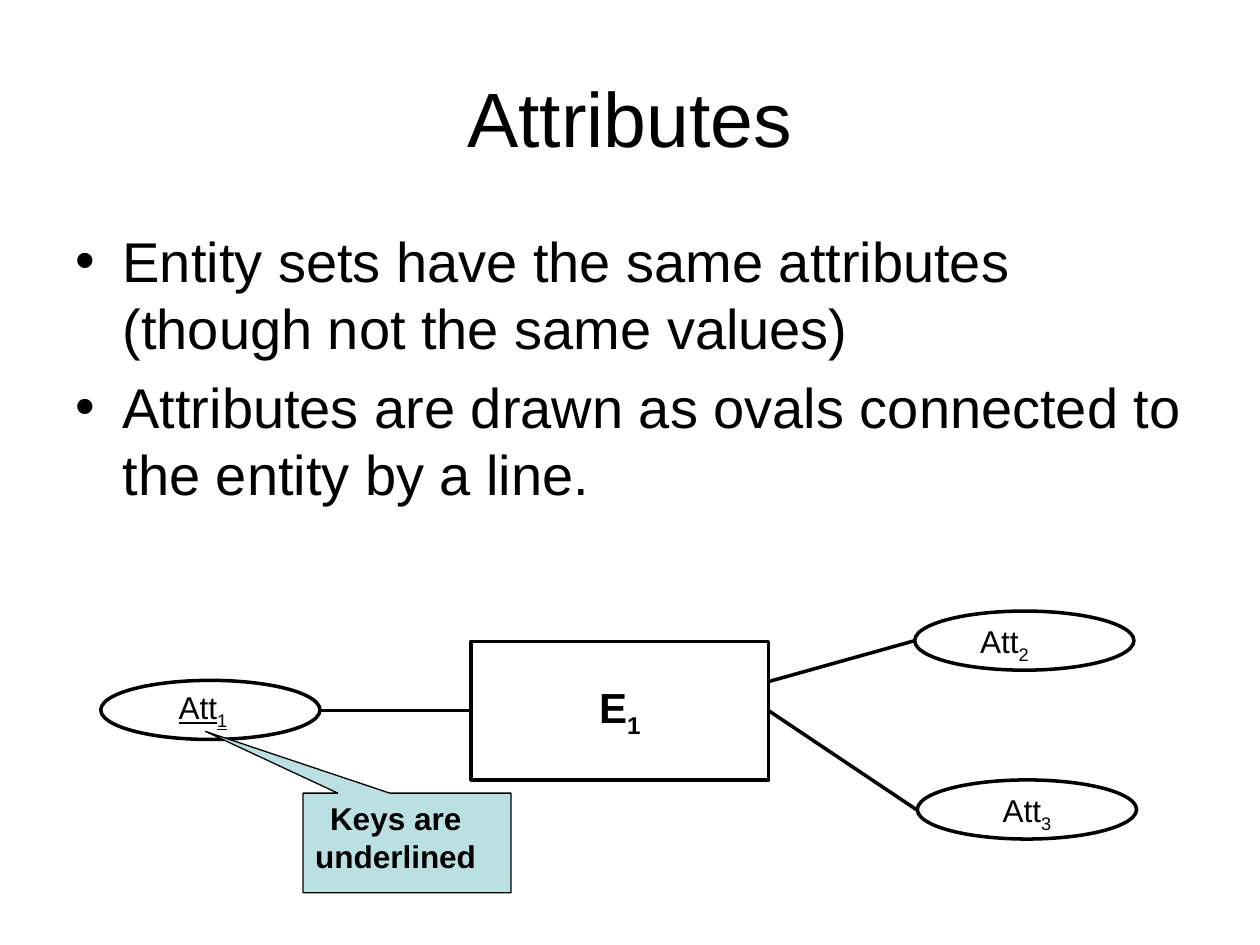
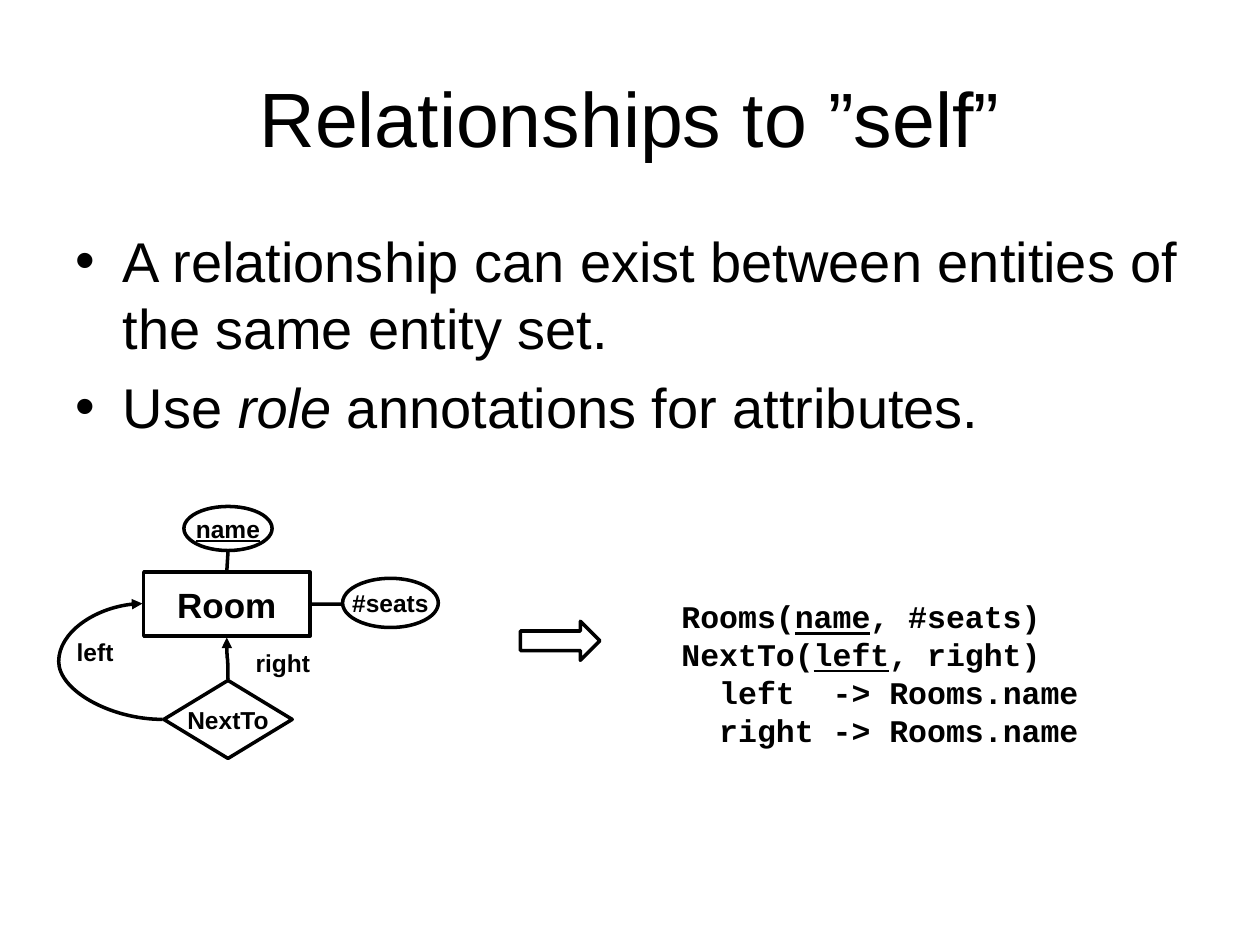
"""Build two slides on attributes and self relationships in E/R diagrams."""
from typing import Any, NamedTuple, Optional

import pptx
import pptx.dml.color
import pptx.enum.shapes
import pptx.enum.text
import pptx.oxml.ns
import pptx.util
from lxml import etree

Pt = pptx.util.Pt
Kind = pptx.enum.shapes.MSO_SHAPE
Link = pptx.enum.shapes.MSO_CONNECTOR
Align = pptx.enum.text.PP_ALIGN
Anchor = pptx.enum.text.MSO_ANCHOR
qn = pptx.oxml.ns.qn

BLACK = pptx.dml.color.RGBColor(0x00, 0x00, 0x00)
WHITE = pptx.dml.color.RGBColor(0xFF, 0xFF, 0xFF)
AQUA = pptx.dml.color.RGBColor(0xBB, 0xE0, 0xE3)
SANS, MONO = "Arial", "Courier New"
STROKE = 2
INDENT = 27
OVAL = (125.3, 33.8)


class Box(NamedTuple):
    """Left, top, width and height in points."""

    left: float
    top: float
    width: float
    height: float


class Bit(NamedTuple):
    """A piece of text with an optional mark: u, i or sub."""

    text: str
    marks: tuple[str, ...] = ()


class Style(NamedTuple):
    """How a block of text looks."""

    size: float
    bold: bool = False
    font: str = SANS
    align: Any = Align.LEFT
    anchor: Any = Anchor.TOP
    wrap: bool = False
    bullet: bool = False


class Node(NamedTuple):
    """A preset shape with its place, label and looks."""

    kind: Any
    box: Box
    bits: tuple[Bit, ...] = ()
    size: float = 14
    adjust: tuple[float, ...] = ()


class Label(NamedTuple):
    """A free line of text on a diagram."""

    box: Box
    bits: tuple[Bit, ...]
    style: Style


Lines = list[tuple[Bit, ...]]
Spot = tuple[float, float]

TITLE = Style(44, align=Align.CENTER, anchor=Anchor.MIDDLE, wrap=True)
BODY = Style(32, wrap=True, bullet=True)
CODE = Style(18, bold=True, font=MONO, wrap=True)
NOTE = Style(18, bold=True, align=Align.CENTER, wrap=True)
ATTR = Style(18)
ROLE = Style(14, bold=True)


def dot(para: Any) -> None:
    """Give a paragraph a hanging bullet."""
    props = para._p.get_or_add_pPr()
    props.set("marL", str(Pt(INDENT)))
    props.set("indent", str(-Pt(INDENT)))
    etree.SubElement(props, qn("a:buFont")).set("typeface", SANS)
    etree.SubElement(props, qn("a:buChar")).set("char", "•")


def write(frame: Any, lines: Lines, style: Style) -> None:
    """Fill a text frame with marked lines."""
    frame.word_wrap = style.wrap
    frame.vertical_anchor = style.anchor
    for rank, bits in enumerate(lines):
        para = frame.add_paragraph() if rank else frame.paragraphs[0]
        para.alignment = style.align
        if style.bullet:
            if rank:
                para.space_before = Pt(style.size * 0.2)
            dot(para)
        for bit in bits:
            run = para.add_run()
            run.text = bit.text
            font = run.font
            font.name, font.size, font.bold = style.font, Pt(style.size), style.bold
            font.color.rgb = BLACK
            if "u" in bit.marks:
                font.underline = True
            if "i" in bit.marks:
                font.italic = True
            if "sub" in bit.marks:
                run._r.get_or_add_rPr().set("baseline", "-25000")


def add_text(shapes: Any, box: Box, lines: Lines, style: Style) -> None:
    """Add a text box."""
    item = shapes.add_textbox(*map(Pt, box))
    write(item.text_frame, lines, style)


def add_node(shapes: Any, node: Node) -> Any:
    """Add an outlined shape with a centred bold label."""
    item = shapes.add_shape(node.kind, *map(Pt, node.box))
    item.shadow.inherit = False
    item.fill.background()
    item.line.color.rgb = BLACK
    item.line.width = Pt(STROKE)
    for rank, value in enumerate(node.adjust):
        item.adjustments[rank] = value
    if node.bits:
        style = Style(node.size, True, align=Align.CENTER, anchor=Anchor.MIDDLE)
        write(item.text_frame, [node.bits], style)
    return item


def add_link(shapes: Any, start: Spot, end: Spot, kind: Any = Link.STRAIGHT,
             tip: Optional[str] = None) -> Any:
    """Add a connector, with an arrow at its headEnd or tailEnd if asked."""
    link = shapes.add_connector(kind, *map(Pt, start + end))
    link.line.color.rgb = BLACK
    link.line.width = Pt(STROKE)
    if tip:
        line = link.line._get_or_add_ln()
        etree.SubElement(line, qn(f"a:{tip}")).set("type", "triangle")
    etree.SubElement(link._element.spPr, qn("a:effectLst"))
    return link


def bend(link: Any, ratio: float, turn: int = 0) -> None:
    """Set the bulge of a curved connector and turn it by whole degrees."""
    props = link._element.spPr
    guides = props.find(qn("a:prstGeom")).find(qn("a:avLst"))
    guide = etree.SubElement(guides, qn("a:gd"))
    guide.set("name", "adj1")
    guide.set("fmla", f"val {round(ratio * 100000)}")
    if turn:
        props.find(qn("a:xfrm")).set("rot", str(turn * 60000))


def add_page(deck: Any, title: str, lines: Lines) -> Any:
    """Add a slide with title and bullets, and return its shapes."""
    slide = deck.slides.add_slide(deck.slide_layouts[6])
    slide.background.fill.solid()
    slide.background.fill.fore_color.rgb = WHITE
    add_text(slide.shapes, Box(36, 21.6, 648, 90), [(Bit(title),)], TITLE)
    add_text(slide.shapes, Box(36, 126, 648, 358), lines, BODY)
    return slide.shapes


def add_note(shapes: Any) -> None:
    """Add the callout that explains keys."""
    note = add_node(shapes, Node(Kind.RECTANGULAR_CALLOUT, Box(173.2, 453.2, 118.8, 56.9),
                                 adjust=(-0.97, -1.12)))
    note.fill.solid()
    note.fill.fore_color.rgb = AQUA
    note.line.width = Pt(0.75)
    frame = note.text_frame
    frame.margin_left, frame.margin_right = Pt(3.6), Pt(16.6)
    write(frame, [(Bit("Keys are underlined"),)], NOTE)


def draw_attrs(deck: Any) -> None:
    """Draw the slide on attributes."""
    shapes = add_page(deck, "Attributes", [
        (Bit("Entity sets have the same attributes (though not the same values)"),),
        (Bit("Attributes are drawn as ovals connected to the entity by a line."),),
    ])
    core = add_node(shapes, Node(Kind.RECTANGLE, Box(269.3, 366.5, 169.9, 79.2),
                                 (Bit("E"), Bit("1", ("sub",))), 24))
    for left, top in ((524.2, 445.7), (57.6, 388.8), (522.7, 349.2)):
        add_node(shapes, Node(Kind.OVAL, Box(left, top, *OVAL)))
    labels = (("1", ("u",), Box(95, 389.5, 43.2, 28.8)),
              ("3", (), Box(565.9, 448.6, 43.2, 28.8)),
              ("2", (), Box(553, 352.1, 74.9, 28.8)))
    for digit, marks, box in labels:
        bits = (Bit("Att", marks), Bit(digit, marks + ("sub",)))
        add_text(shapes, box, [bits], ATTR)
    add_link(shapes, (439.2, 389.5), (522.7, 366.1))
    for side, edge, end in ((3, 439.2, (524.2, 463)), (1, 269.3, (182.9, 406.1))):
        add_link(shapes, (edge, 406.1), end).begin_connect(core, side)
    add_note(shapes)


def draw_self(deck: Any) -> None:
    """Draw the slide on relationships to self."""
    page = add_page(deck, "Relationships to ”self”", [
        (Bit("A relationship can exist between entities of the same entity set."),),
        (Bit("Use "), Bit("role", ("i",)), Bit(" annotations for attributes.")),
    ])
    shapes = page.add_group_shape().shapes
    room = add_node(shapes, Node(Kind.RECTANGLE, Box(82.1, 326.9, 95, 36.7),
                                 (Bit("Room"),), 20))
    nodes = (
        Node(Kind.OVAL, Box(105.1, 289.4, 50.4, 25.2), (Bit("name", ("u",)),)),
        Node(Kind.OVAL, Box(195.8, 330.5, 54.7, 28.1), (Bit("#seats"),)),
        Node(Kind.DIAMOND, Box(93.6, 388.8, 73.4, 44.6), (Bit("NextTo"),)),
    )
    for node in nodes:
        add_node(shapes, node)
    for start, end, side in (((130.3, 315.4), (129.6, 326.9), 0),
                             ((195.1, 345.2), (177.1, 345.2), 3)):
        add_link(shapes, start, end).end_connect(room, side)
    loop = add_link(shapes, (81.4, 344.9), (92.9, 411.1), Link.CURVE, "headEnd")
    bend(loop, -4.16)
    rise = add_link(shapes, (141.8, 375.8), (118.1, 376.5), Link.CURVE, "tailEnd")
    bend(rise, 0.5, 90)
    for label in (Label(Box(36.7, 360.7, 35.3, 24.5), (Bit("left"),), ROLE),
                  Label(Box(139, 366.5, 46.1, 24.5), (Bit("right"),), ROLE)):
        add_text(shapes, label.box, [label.bits], label.style)
    add_node(page, Node(Kind.RIGHT_ARROW, Box(297.4, 355, 45.4, 22.3), adjust=(0.5, 0.5)))
    add_text(page, Box(382.3, 337.7, 255.6, 93.6), [
        (Bit("Rooms("), Bit("name", ("u",)), Bit(", #seats)")),
        (Bit("NextTo("), Bit("left", ("u",)), Bit(", right)")),
        (Bit("  left  -> Rooms.name"),),
        (Bit("  right -> Rooms.name"),),
    ], CODE)


def main() -> None:
    """Build and save the deck."""
    deck = pptx.Presentation()
    deck.slide_width, deck.slide_height = Pt(720), Pt(540)
    draw_attrs(deck)
    draw_self(deck)
    deck.save("out.pptx")


if __name__ == "__main__":
    main()
